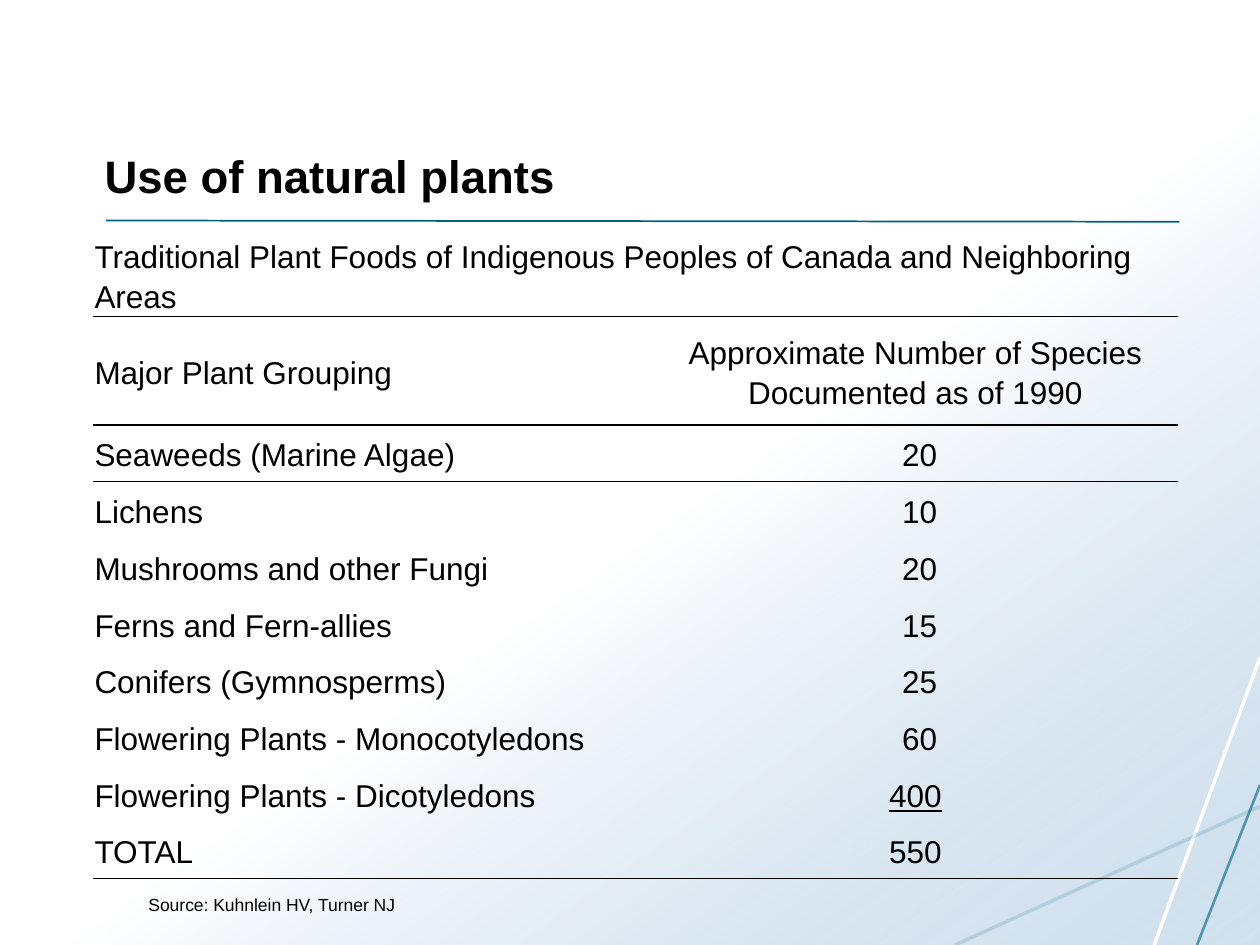
from lxml.etree import SubElement
from pptx import Presentation
from pptx.dml.color import RGBColor
from pptx.enum.shapes import MSO_CONNECTOR, MSO_SHAPE
from pptx.enum.text import MSO_ANCHOR, PP_ALIGN
from pptx.oxml.ns import qn
from pptx.util import Inches, Pt

COLORS = {
    "white": "FFFFFF",
    "black": "000000",
    "sky": "A9C7E0",
    "teal": "00617F",
    "lagoon": "15718F",
}
NO_STYLE_NO_GRID = "{2D5ABB26-0587-4C30-8999-92F81FD0307C}"

GROUPS = [
    ("Seaweeds (Marine Algae)", " 20"),
    ("Lichens", " 10"),
    ("Mushrooms and other Fungi", " 20"),
    ("Ferns and Fern-allies", " 15"),
    ("Conifers (Gymnosperms)", " 25"),
    ("Flowering Plants - Monocotyledons", " 60"),
    ("Flowering Plants - Dicotyledons", "400"),
    ("TOTAL", "550"),
]
ROWS = [
    ("Traditional Plant Foods of Indigenous Peoples of Canada and Neighboring Areas", ""),
    ("Major Plant Grouping", "Approximate Number of Species\nDocumented as of 1990"),
    *GROUPS,
]
RULED_ROWS = (0, 1, len(ROWS) - 1)


def color(name):
    return RGBColor.from_string(COLORS[name])


def set_alpha(fill_element, percent):
    for hue in fill_element.iter(qn("a:srgbClr")):
        SubElement(hue, qn("a:alpha"), val=str(percent * 1000))


def write(frame, text, size=18, bold=False, underline=False,
          align=PP_ALIGN.LEFT, spacing=None, after=None):
    frame.word_wrap = True
    paragraph = frame.paragraphs[0]
    paragraph.text = text
    paragraph.alignment = align
    if spacing:
        paragraph.line_spacing = spacing
    if after:
        paragraph.space_after = Pt(after)
    for span in paragraph.runs:
        span.font.name = "Arial"
        span.font.size = Pt(size)
        span.font.bold = bold
        span.font.underline = underline
        span.font.color.rgb = color("black")


class SlideBuilder:
    def __init__(self, deck):
        self.page = deck.slides.add_slide(deck.slide_layouts[5])
        self.shapes = self.page.shapes

    def backdrop(self, width, height):
        box = self.shapes.add_shape(MSO_SHAPE.RECTANGLE, 0, 0, width, height)
        box.shadow.inherit = False
        box.line.fill.background()
        box.fill.gradient()
        box.fill.gradient_angle = 305
        start, end = box.fill.gradient_stops
        start.position, end.position = 0.54, 1
        start.color.rgb, end.color.rgb = color("white"), color("sky")
        stops = box.element.spPr.findall(".//" + qn("a:gs"))
        set_alpha(stops[-1], 54)

    def line(self, start, end, hue, width, alpha=None):
        points = [Inches(value) for value in (*start, *end)]
        connector = self.shapes.add_connector(MSO_CONNECTOR.STRAIGHT, *points)
        connector.line.color.rgb = color(hue)
        connector.line.width = Pt(width)
        properties = connector.element.spPr
        if alpha:
            set_alpha(properties, alpha)
        SubElement(properties, qn("a:effectLst"))

    def title(self, text, left, top, width, height):
        box = self.shapes.title
        self.shapes.element.append(box.element)
        box.left, box.top = Inches(left), Inches(top)
        box.width, box.height = Inches(width), Inches(height)
        box.text_frame.vertical_anchor = MSO_ANCHOR.BOTTOM
        write(box.text_frame, text, size=26, bold=True)

    def border(self, cell, side):
        properties = cell._tc.get_or_add_tcPr()
        edge = SubElement(properties, qn("a:" + side), w=str(Pt(1)))
        fill = SubElement(edge, qn("a:solidFill"))
        SubElement(fill, qn("a:srgbClr"), val=COLORS["black"])

    def table(self, left, top, columns, heights):
        frame = self.shapes.add_table(
            len(heights), len(columns), Inches(left), Inches(top),
            Inches(sum(columns)), Inches(sum(heights)))
        table = frame.table
        table.first_row = table.horz_banding = False
        table._tbl.tblPr.find(qn("a:tableStyleId")).text = NO_STYLE_NO_GRID
        for column, width in zip(table.columns, columns):
            column.width = Inches(width)
        for row, height in zip(table.rows, heights):
            row.height = Inches(height)
        table.cell(0, 0).merge(table.cell(0, 1))
        for index, texts in enumerate(ROWS):
            for position, text in enumerate(texts):
                cell = table.cell(index, position)
                cell.margin_left = cell.margin_right = Inches(0.01)
                cell.margin_top = cell.margin_bottom = Inches(0.01)
                cell.vertical_anchor = MSO_ANCHOR.MIDDLE if index else MSO_ANCHOR.BOTTOM
                if index - 1 in RULED_ROWS:
                    self.border(cell, "lnT")
                if index in RULED_ROWS:
                    self.border(cell, "lnB")
                cell.fill.background()
                if text:
                    write(cell.text_frame, text, underline=text == "400",
                          align=PP_ALIGN.CENTER if position else PP_ALIGN.LEFT,
                          spacing=1.15, after=10)

    def label(self, text, left, top, width, height):
        box = self.shapes.add_textbox(
            Inches(left), Inches(top), Inches(width), Inches(height))
        write(box.text_frame, text, size=10)


def main():
    deck = Presentation()
    deck.slide_width, deck.slide_height = Inches(10), Inches(7.5)
    slide = SlideBuilder(deck)
    slide.backdrop(deck.slide_width, deck.slide_height)
    slide.line((10, 5.22), (9.16, 7.5), "white", 2)
    slide.line((10, 6.4), (7.58, 7.5), "lagoon", 2, alpha=16)
    slide.line((10, 6.23), (9.5, 7.5), "teal", 1.5, alpha=60)
    slide.line((0.84, 1.75), (9.36, 1.76), "teal", 1)
    slide.title("Use of natural plants", 0.73, 0.33, 8.62, 1.33)
    slide.table(0.74, 1.85, [4.44, 4.17], [0.45, 0.86] + [0.45] * len(GROUPS))
    slide.label("Source: Kuhnlein HV, Turner NJ", 1.08, 7.05, 5.97, 0.27)
    deck.save("out.pptx")


if __name__ == "__main__":
    main()
